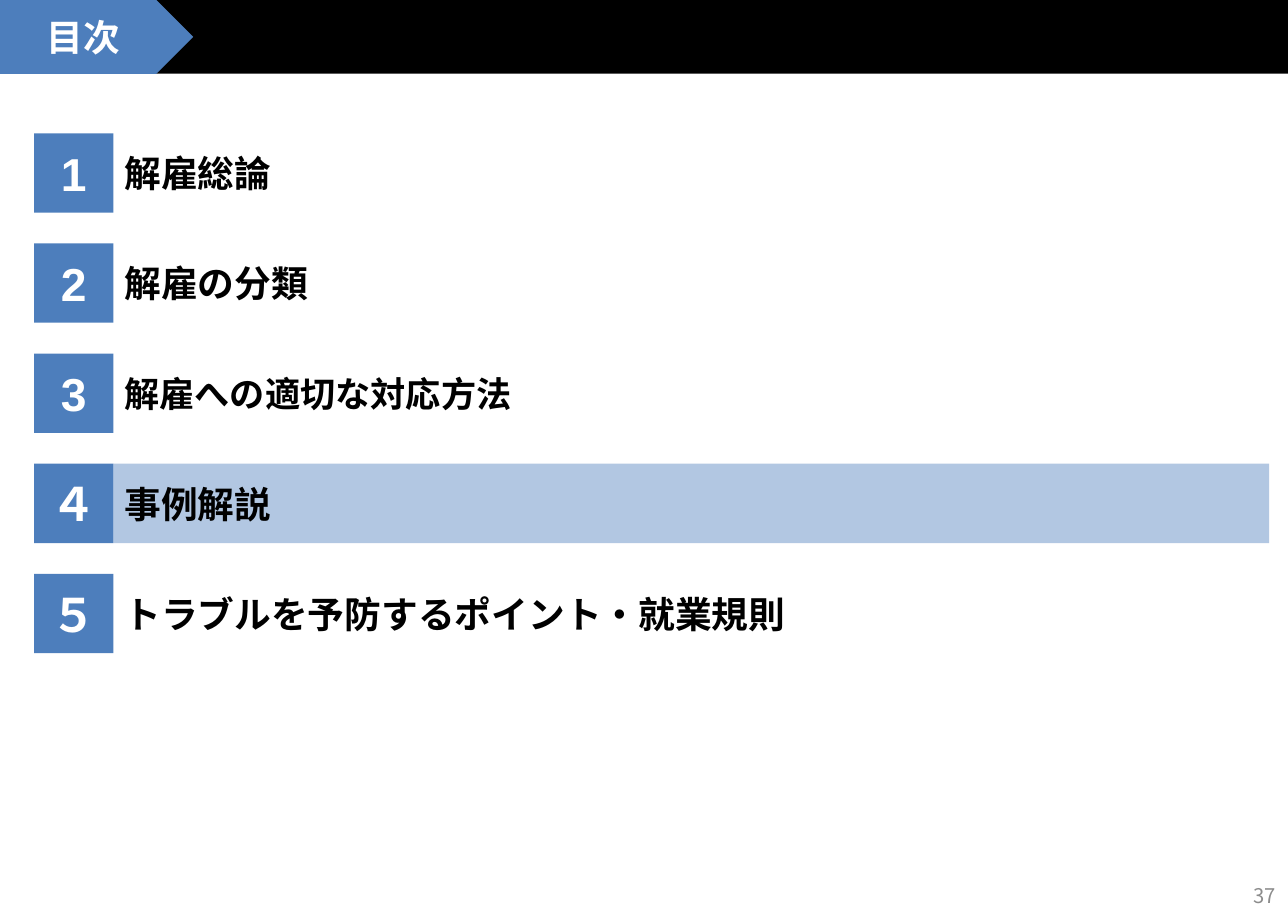
from dataclasses import dataclass

from lxml.etree import SubElement
from pptx import Presentation
from pptx.dml.color import RGBColor
from pptx.enum.shapes import MSO_SHAPE as Preset
from pptx.enum.text import MSO_ANCHOR as Anchor, PP_ALIGN as Align
from pptx.oxml.ns import qn
from pptx.util import Inches, Pt


@dataclass(frozen=True)
class Theme:
    blue: str = "4D7EBC"
    highlight: str = "0147A0"
    highlight_alpha: int = 30
    black: str = "000000"
    white: str = "FFFFFF"
    grey: str = "8C8C8C"
    font: str = "Arial"
    number_font: str = "Noto Sans CJK JP"
    title_size: float = 24
    digit_size: float = 30.2
    footer_size: float = 13.2


THEME = Theme()
PAGE_WIDTH, PAGE_HEIGHT = 11.69, 8.27
HEADER_HEIGHT = 0.67
ROW_HEIGHT, ROW_PITCH = 0.72, 1.0
CURRENT = 4
# number, chapter title, title size
CHAPTERS = [
    ("1", "解雇総論", 24),
    ("2", "解雇の分類", 24),
    ("3", "解雇への適切な対応方法", 23),
    ("４", "事例解説", 24),
    ("５", "トラブルを予防するポイント・就業規則", 24),
]


def add_panel(page, preset, box, color, alpha=None):
    panel = page.shapes.add_shape(preset, *map(Inches, box))
    panel.shadow.inherit = False
    panel.line.fill.background()
    panel.fill.solid()
    panel.fill.fore_color.rgb = RGBColor.from_string(color)
    if alpha is not None:
        color_node = panel.fill._xPr.find(".//" + qn("a:srgbClr"))
        SubElement(color_node, qn("a:alpha"), val=str(alpha * 1000))
    return panel


def write(shape, text, size, color, align=Align.LEFT, font=THEME.font, bold=True):
    frame = shape.text_frame
    frame.text = text
    frame.word_wrap = True
    frame.vertical_anchor = Anchor.MIDDLE
    para = frame.paragraphs[0]
    para.alignment = align
    span = para.runs[0].font
    span.name, span.size, span.bold = font, Pt(size), bold
    span.color.rgb = RGBColor.from_string(color)
    # The same typeface for East Asian characters
    SubElement(span._element, qn("a:ea"), typeface=font)


def add_label(page, box, text, size, color, **style):
    label = page.shapes.add_textbox(*map(Inches, box))
    write(label, text, size, color, **style)


def add_header(page, left, top, width, height):
    bar_left = left + 1.3
    add_panel(page, Preset.RECTANGLE, (bar_left, top, width - 1.3, height), THEME.black)
    add_panel(page, Preset.PENTAGON, (left, top, 0.15 * width, height), THEME.blue)
    add_label(page, (left, top + 0.08, 0.13 * width, height - 0.17), "目次",
              THEME.title_size, THEME.white, align=Align.CENTER)


def add_chapter(page, left, top, width, height, chapter, current):
    number, title, size = chapter
    title_left, title_width = left + height, width - height
    # Band behind the current chapter
    if current:
        add_panel(page, Preset.RECTANGLE, (title_left, top, title_width, height),
                  THEME.highlight, THEME.highlight_alpha)
    # Number tile and title
    tile = add_panel(page, Preset.RECTANGLE, (left, top, height, height), THEME.blue)
    write(tile, number, THEME.digit_size, THEME.white, align=Align.CENTER)
    add_label(page, (title_left, top, title_width, height), title, size, THEME.black)


def add_contents(page, left, top, width):
    for index, chapter in enumerate(CHAPTERS):
        add_chapter(page, left, top + index * ROW_PITCH, width, ROW_HEIGHT,
                    chapter, index + 1 == CURRENT)


def add_page_number(page, left, top, width, height):
    add_label(page, (left, top, width, height), "37", THEME.footer_size, THEME.grey,
              align=Align.RIGHT, font=THEME.number_font, bold=False)


def main():
    deck = Presentation()
    deck.slide_width, deck.slide_height = Inches(PAGE_WIDTH), Inches(PAGE_HEIGHT)
    page = deck.slides.add_slide(deck.slide_layouts[6])
    add_header(page, 0, 0, PAGE_WIDTH, HEADER_HEIGHT)
    add_contents(page, 0.31, 1.21, 11.21)
    add_page_number(page, 9.05, 7.91, 2.63, 0.44)
    deck.save("out.pptx")


if __name__ == "__main__":
    main()
